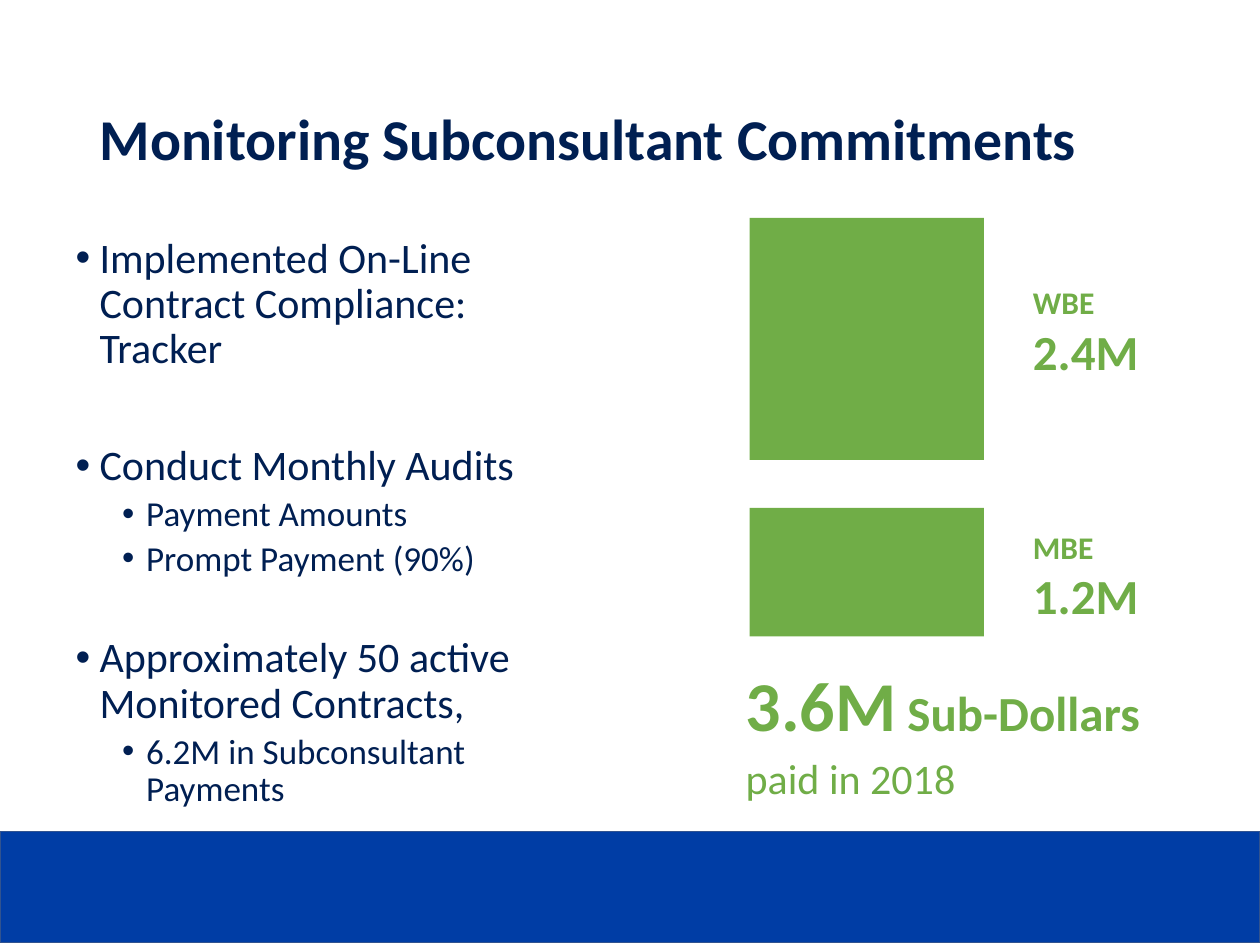
import pptx
import pptx.util
import pptx.dml.color
import pptx.enum.shapes
import pptx.enum.text
import pptx.oxml.ns
import lxml.etree

NAVY = pptx.dml.color.RGBColor(0x00, 0x1F, 0x52)
BLUE = pptx.dml.color.RGBColor(0x00, 0x3D, 0xA5)
EDGE = pptx.dml.color.RGBColor(0x31, 0x53, 0x8F)
GREEN = pptx.dml.color.RGBColor(0x70, 0xAD, 0x47)
FONT = "Calibri"
RECTANGLE = pptx.enum.shapes.MSO_SHAPE.RECTANGLE

deck = pptx.Presentation()
deck.slide_width = pptx.util.Inches(10)
deck.slide_height = pptx.util.Inches(7.5)
COLUMN = deck.slide_width / 100
ROW = deck.slide_height / 75
slide = deck.slides.add_slide(deck.slide_layouts[1])


def grid(left, top, width, height):
    return [pptx.util.Emu(round(cells * unit)) for cells, unit in
            ((left, COLUMN), (top, ROW), (width, COLUMN), (height, ROW))]


def write(paragraph, text, size, color=NAVY, bold=False, before=0, spacing=1.0):
    paragraph.alignment = pptx.enum.text.PP_ALIGN.LEFT
    paragraph.space_before = pptx.util.Pt(before)
    paragraph.line_spacing = spacing
    run = paragraph.add_run()
    run.text = text
    run.font.name = FONT
    run.font.size = pptx.util.Pt(size)
    run.font.bold = bold
    run.font.color.rgb = color


band = slide.shapes.add_shape(RECTANGLE, *grid(0, 66, 100, 8.8))
band.shadow.inherit = False
band.fill.solid()
band.fill.fore_color.rgb = BLUE
band.line.color.rgb = EDGE
band.line.width = pptx.util.Pt(1)

heading = slide.shapes.title
heading.left, heading.top, heading.width, heading.height = grid(6.9, 4, 86.2, 14.5)
heading.text_frame.vertical_anchor = pptx.enum.text.MSO_ANCHOR.MIDDLE
write(heading.text_frame.paragraphs[0], "Monitoring Subconsultant Commitments",
      33, bold=True, spacing=0.9)

actions = slide.placeholders[1]
actions.left, actions.top, actions.width, actions.height = grid(5, 18.3, 40.3, 52.2)
actions.text_frame.auto_size = pptx.enum.text.MSO_AUTO_SIZE.NONE
for index, (level, before, text) in enumerate([
    (0, 0, "Implemented On-Line Contract Compliance: Tracker"),
    (0, 41, "Conduct Monthly Audits"),
    (1, 3.8, "Payment Amounts"),
    (1, 3.8, "Prompt Payment (90%)"),
    (0, 33, "Approximately 50 active Monitored Contracts,"),
    (1, 3.8, "6.2M in Subconsultant Payments"),
]):
    frame = actions.text_frame
    item = frame.add_paragraph() if index else frame.paragraphs[0]
    item.level = level
    properties = item._p.get_or_add_pPr()
    properties.set("marL", str(pptx.util.Inches((0.19, 0.56)[level])))
    properties.set("indent", str(-pptx.util.Inches(0.19)))
    bullet_font = lxml.etree.SubElement(properties, pptx.oxml.ns.qn("a:buFont"))
    bullet_font.set("typeface", "Arial")
    bullet = lxml.etree.SubElement(properties, pptx.oxml.ns.qn("a:buChar"))
    bullet.set("char", "•")
    write(item, text, (24, 20)[level], before=before, spacing=0.9)

for group, amount, bar_top, bar_height, label_top in [
    ("WBE", "2.4M", 17.3, 19.2, 22),
    ("MBE", "1.2M", 40.3, 10.2, 41.4),
]:
    bar = slide.shapes.add_shape(RECTANGLE, *grid(59.5, bar_top, 18.6, bar_height))
    bar.shadow.inherit = False
    bar.fill.solid()
    bar.fill.fore_color.rgb = GREEN
    bar.line.fill.background()
    label = slide.shapes.add_textbox(*grid(81, label_top, 14, 5.1)).text_frame
    label.word_wrap = True
    write(label.paragraphs[0], group, 18, color=GREEN, bold=True)
    write(label.add_paragraph(), amount, 28, color=GREEN, bold=True)

total = slide.shapes.add_textbox(*grid(58.2, 52, 41.8, 13.5)).text_frame
total.word_wrap = True
write(total.paragraphs[0], "3.6M", 40, color=GREEN, bold=True)
write(total.paragraphs[0], " Sub-Dollars", 28, color=GREEN, bold=True)
write(total.add_paragraph(), "paid in 2018", 24, color=GREEN, before=4)

deck.save("out.pptx")
